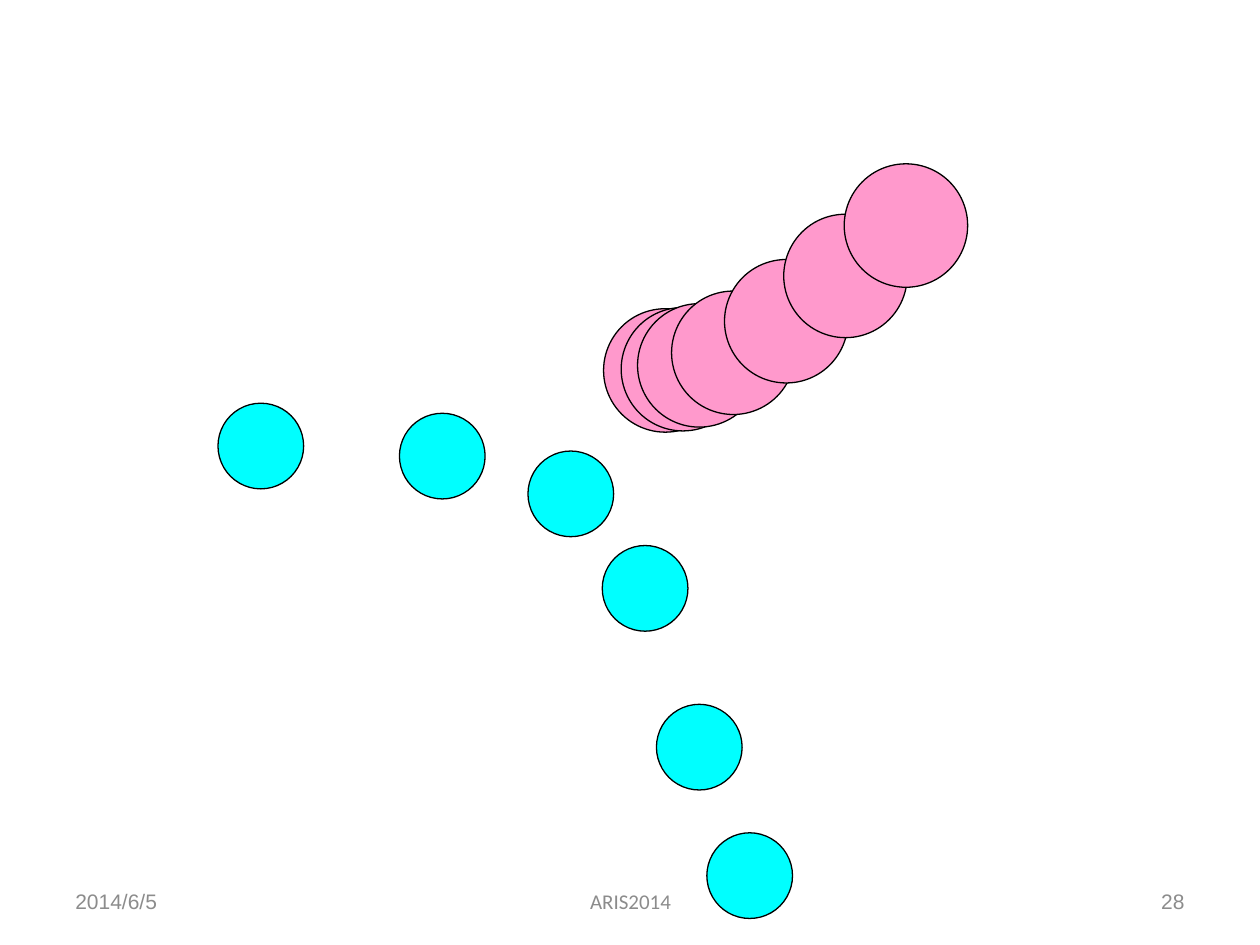
from dataclasses import dataclass

from pptx import Presentation
from pptx.dml.color import RGBColor
from pptx.enum.shapes import MSO_SHAPE
from pptx.enum.text import MSO_ANCHOR, PP_ALIGN
from pptx.slide import Slide
from pptx.util import Inches, Length, Pt

COLORS = {"cyan": "00FFFF", "pink": "FF99CC", "outline": "000000", "footer": "8C8C8C"}
COLUMNS, ROWS = 100, 75
WIDTH, HEIGHT = Inches(10), Inches(7.5)
FOOTER_ROW, FOOTER_ROWS = 69.5, 4


@dataclass
class Track:
    color: str
    diameter: float
    positions: list[tuple[float, float]]


@dataclass
class Footer:
    text: str
    column: float
    columns: float
    align: PP_ALIGN
    font: str


TRACKS = [
    Track("cyan", 6.8, [(17.3, 32), (31.7, 32.8), (41.9, 35.8),
                        (47.8, 43.3), (52.1, 55.9), (56.1, 66.1)]),
    Track("pink", 9.8, [(47.9, 24.5), (49.3, 24.4), (50.6, 24.1), (53.3, 23.1),
                        (57.5, 20.6), (62.2, 17), (67, 13)]),
]

FOOTERS = [
    Footer("2014/6/5", 5, 23.3, PP_ALIGN.LEFT, "Arial"),
    Footer("ARIS2014", 34.2, 31.7, PP_ALIGN.CENTER, "Calibri"),
    Footer("28", 71.7, 23.3, PP_ALIGN.RIGHT, "Arial"),
]


def cols(n: float) -> Length:
    return Length(round(WIDTH * n / COLUMNS))


def rows(n: float) -> Length:
    return Length(round(HEIGHT * n / ROWS))


def rgb(name: str) -> RGBColor:
    return RGBColor.from_string(COLORS[name])


def draw_track(s: Slide, track: Track) -> None:
    for column, row in track.positions:
        sp = s.shapes.add_shape(MSO_SHAPE.OVAL, cols(column), rows(row),
                                cols(track.diameter), rows(track.diameter))
        sp.shadow.inherit = False
        sp.fill.solid()
        sp.fill.fore_color.rgb = rgb(track.color)
        sp.line.color.rgb = rgb("outline")
        sp.line.width = Pt(0.75)


def draw_footer(s: Slide, footer: Footer) -> None:
    sp = s.shapes.add_textbox(cols(footer.column), rows(FOOTER_ROW),
                              cols(footer.columns), rows(FOOTER_ROWS))
    tf = sp.text_frame
    tf.word_wrap = True
    tf.vertical_anchor = MSO_ANCHOR.MIDDLE
    p = tf.paragraphs[0]
    p.alignment = footer.align
    r = p.add_run()
    r.text = footer.text
    r.font.name = footer.font
    r.font.size = Pt(12)
    r.font.color.rgb = rgb("footer")


def main() -> None:
    prs = Presentation()
    prs.slide_width, prs.slide_height = WIDTH, HEIGHT
    s = prs.slides.add_slide(prs.slide_layouts[6])
    for track in TRACKS:
        draw_track(s, track)
    for footer in FOOTERS:
        draw_footer(s, footer)
    prs.save("out.pptx")


if __name__ == "__main__":
    main()
